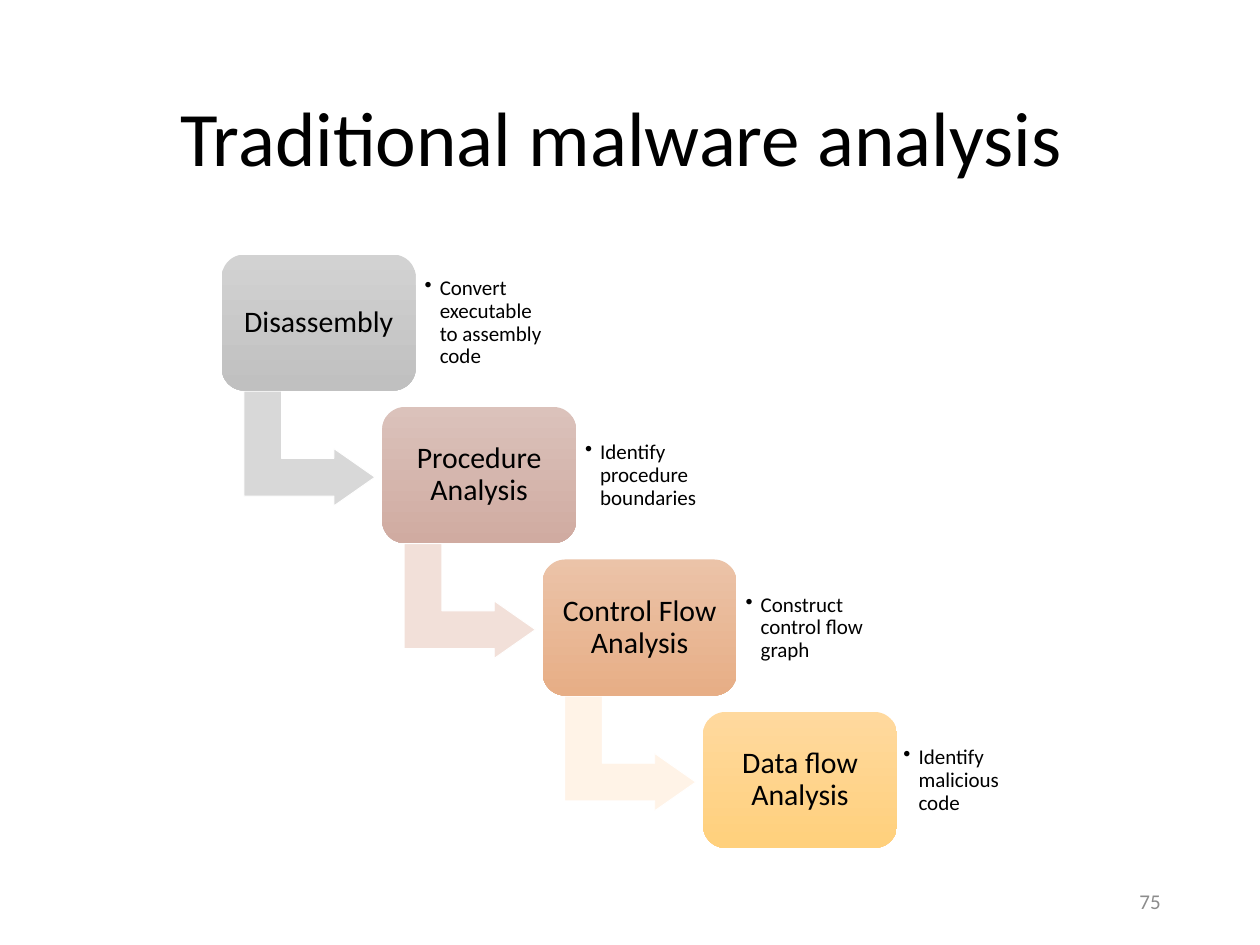
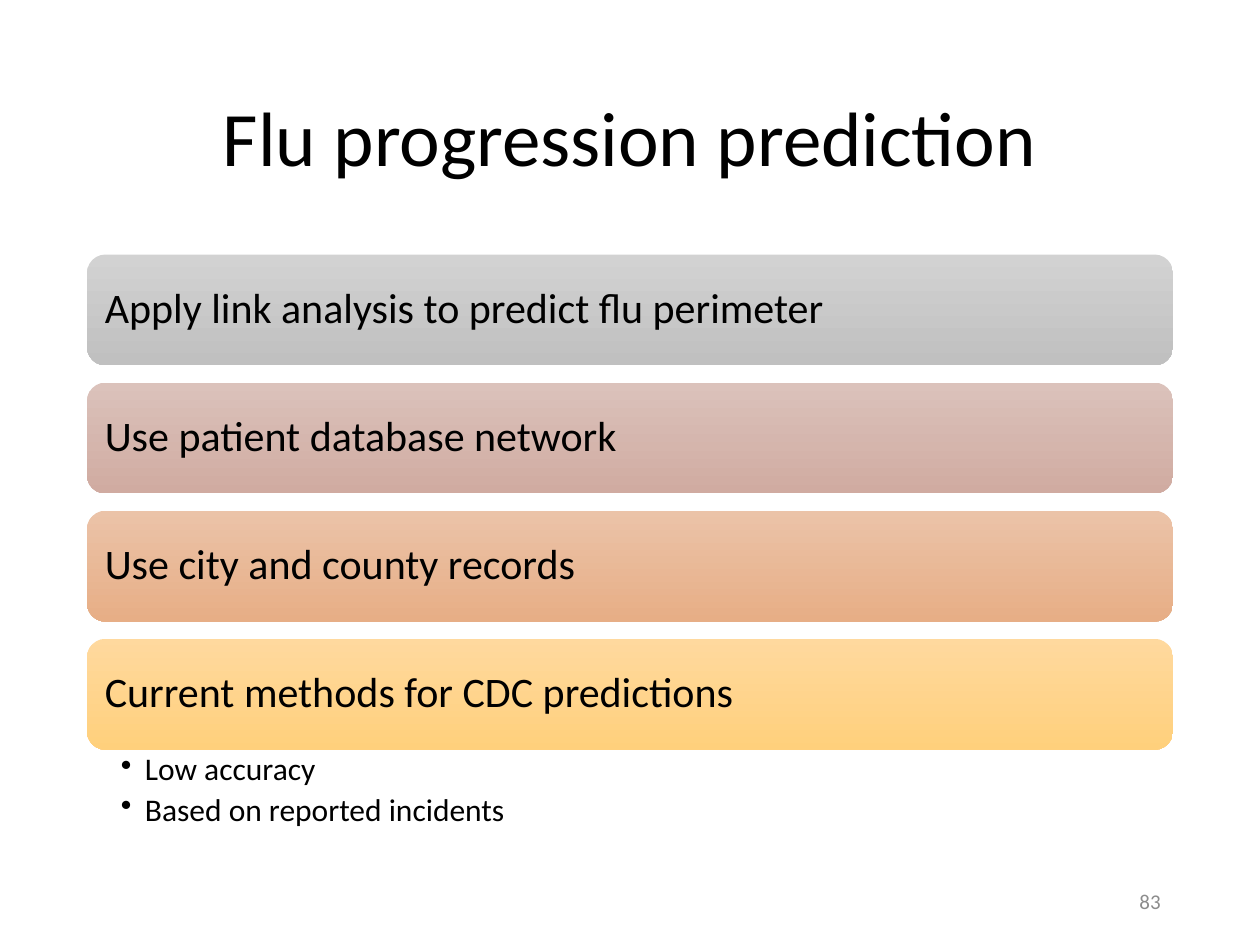
from lxml import etree
from pptx import Presentation
from pptx.dml.color import RGBColor
from pptx.enum.shapes import MSO_SHAPE
from pptx.enum.text import MSO_ANCHOR, PP_ALIGN
from pptx.oxml.ns import qn
from pptx.util import Inches, Pt

ROUNDED = MSO_SHAPE.ROUNDED_RECTANGLE
BENT_ARROW = MSO_SHAPE.BENT_UP_ARROW
LEFT, CENTER, RIGHT = PP_ALIGN.LEFT, PP_ALIGN.CENTER, PP_ALIGN.RIGHT
TOP, MIDDLE = MSO_ANCHOR.TOP, MSO_ANCHOR.MIDDLE

FONT = "Calibri"
BLACK, WHITE, GREY = "000000", "FFFFFF", "8C8C8C"
GRADIENTS = [("D2D2D2", "C0C0C0"), ("DBC2BB", "D0ABA1"),
             ("EBC3A8", "E7AE86"), ("FFD99E", "FFD07C")]
ARROW_COLORS = ["D8D8D8", "F2E0D9", "FFF3E7"]
ARROW_ADJUSTMENTS = [0.328, 0.25, 0.358]
TITLE_BOX = (0.69, 0.4, 8.62, 1.45)
NUMBER_BOX = (7.06, 6.95, 2.25, 0.4)
STAIRCASE_BOX = (1.76, 2.02, 6.48, 4.71)
BARS_BOX = (0.69, 2.02, 8.62, 4.71)

STEPS = [
    ("Disassembly", "Convert executable to assembly code"),
    ("Procedure Analysis", "Identify procedure boundaries"),
    ("Control Flow Analysis", "Construct control flow graph"),
    ("Data flow Analysis", "Identify malicious code"),
]
BARS = [
    "Apply link analysis to predict flu perimeter",
    "Use patient database network",
    "Use city and county records",
    "Current methods for CDC predictions",
]
BAR_NOTES = ["Low accuracy", "Based on reported incidents"]


def color(hex_string):
    """Turn a hex string into a colour."""
    return RGBColor.from_string(hex_string)


def inches(box):
    """Turn a box of plain numbers into lengths."""
    return [Inches(value) for value in box]


def write_text(shape, *lines, size, ink=BLACK, align=LEFT, anchor=MIDDLE,
               insets=(0.1, 0.05, 0.1, 0.05), spacing=0.9, after=0, bullet=0):
    """Write one formatted paragraph per line; bullet is the hanging indent."""
    frame = shape.text_frame
    frame.word_wrap = True
    frame.vertical_anchor = anchor
    (frame.margin_left, frame.margin_top,
     frame.margin_right, frame.margin_bottom) = inches(insets)
    for index, line in enumerate(lines):
        paragraph = frame.add_paragraph() if index else frame.paragraphs[0]
        paragraph.alignment = align
        paragraph.line_spacing = spacing
        paragraph.space_before = Pt(0)
        paragraph.space_after = Pt(after)
        run = paragraph.add_run()
        run.text = line
        run.font.name = FONT
        run.font.size = Pt(size)
        run.font.color.rgb = color(ink)
        if bullet:
            properties = paragraph._p.get_or_add_pPr()
            properties.set("marL", str(Inches(bullet)))
            properties.set("indent", str(-Inches(bullet)))
            etree.SubElement(properties, qn("a:buChar")).set("char", "•")


def add_text(slide, box, *lines, **text_format):
    """Add a text box with formatted lines."""
    write_text(slide.shapes.add_textbox(*inches(box)), *lines, **text_format)


def add_gradient_box(slide, box, gradient, text, **text_format):
    """Add a rounded box with a vertical gradient and a label."""
    shape = slide.shapes.add_shape(ROUNDED, *inches(box))
    shape.shadow.inherit = False
    shape.line.fill.background()
    shape.fill.gradient()
    shape.fill.gradient_angle = 270
    for stop, hex_string in zip(shape.fill.gradient_stops, gradient):
        stop.color.rgb = color(hex_string)
    write_text(shape, text, **text_format)


def add_bent_arrow(slide, box, fill):
    """Add an arrow that runs down and then right."""
    arrow = slide.shapes.add_shape(BENT_ARROW, *inches(box))
    arrow.rotation = 90
    arrow.shadow.inherit = False
    for index, value in enumerate(ARROW_ADJUSTMENTS):
        arrow.adjustments[index] = value
    arrow.fill.solid()
    arrow.fill.fore_color.rgb = color(fill)
    arrow.line.color.rgb = color(WHITE)
    arrow.line.width = Pt(0.5)


def add_titled_slide(presentation, title, number):
    """Add a slide with its title and page number."""
    slide = presentation.slides.add_slide(presentation.slide_layouts[5])
    placeholder = slide.shapes.title
    (placeholder.left, placeholder.top,
     placeholder.width, placeholder.height) = inches(TITLE_BOX)
    write_text(placeholder, title, size=44, align=CENTER)
    add_text(slide, NUMBER_BOX, number, size=12, ink=GREY, align=RIGHT, spacing=1)
    return slide


def add_staircase(slide, box, steps):
    """Place boxes stepping down to the right, with notes and arrows."""
    left, top, width, height = box
    step_width, step_height, note_width, note_height = 1.54, 1.08, 1.12, 0.87
    gaps = len(steps) - 1
    pitch_x = (width - step_width - note_width) / gaps
    pitch_y = (height - step_height) / gaps
    for index, (label, note) in enumerate(steps):
        x, y = left + index * pitch_x, top + index * pitch_y
        if index < gaps:
            add_bent_arrow(slide, (x + 0.24, y + 1.02, 0.91, 1.04), ARROW_COLORS[index])
        add_gradient_box(slide, (x, y, step_width, step_height), GRADIENTS[index],
                         label, size=17, align=CENTER, insets=[0.07] * 4)
        note_inset = 0.07 if index < gaps else 0.05
        add_text(slide, (x + step_width, y + 0.11, note_width, note_height), note,
                 size=12, insets=[note_inset] * 4, bullet=0.12)


def add_bars(slide, box, bars, notes):
    """Stack full-width bars with bulleted notes below the last one."""
    left, top, width, height = box
    bar_height, notes_height = 0.88, 0.78
    pitch = (height - notes_height - bar_height) / (len(bars) - 1)
    for index, label in enumerate(bars):
        add_gradient_box(slide, (left, top + index * pitch, width, bar_height),
                         GRADIENTS[index], label, size=24, insets=[0.1] * 4)
    add_text(slide, (left, top + height - notes_height, width, notes_height), *notes,
             size=18, anchor=TOP, insets=(0.27, 0.03, 0.14, 0.03), after=3.6, bullet=0.19)


def main():
    """Build both slides and save them."""
    presentation = Presentation()
    presentation.slide_width, presentation.slide_height = Inches(10), Inches(7.5)
    malware = add_titled_slide(presentation, "Traditional malware analysis ", "75")
    add_staircase(malware, STAIRCASE_BOX, STEPS)
    flu = add_titled_slide(presentation, "Flu progression prediction", "83")
    add_bars(flu, BARS_BOX, BARS, BAR_NOTES)
    presentation.save("out.pptx")


if __name__ == "__main__":
    main()
